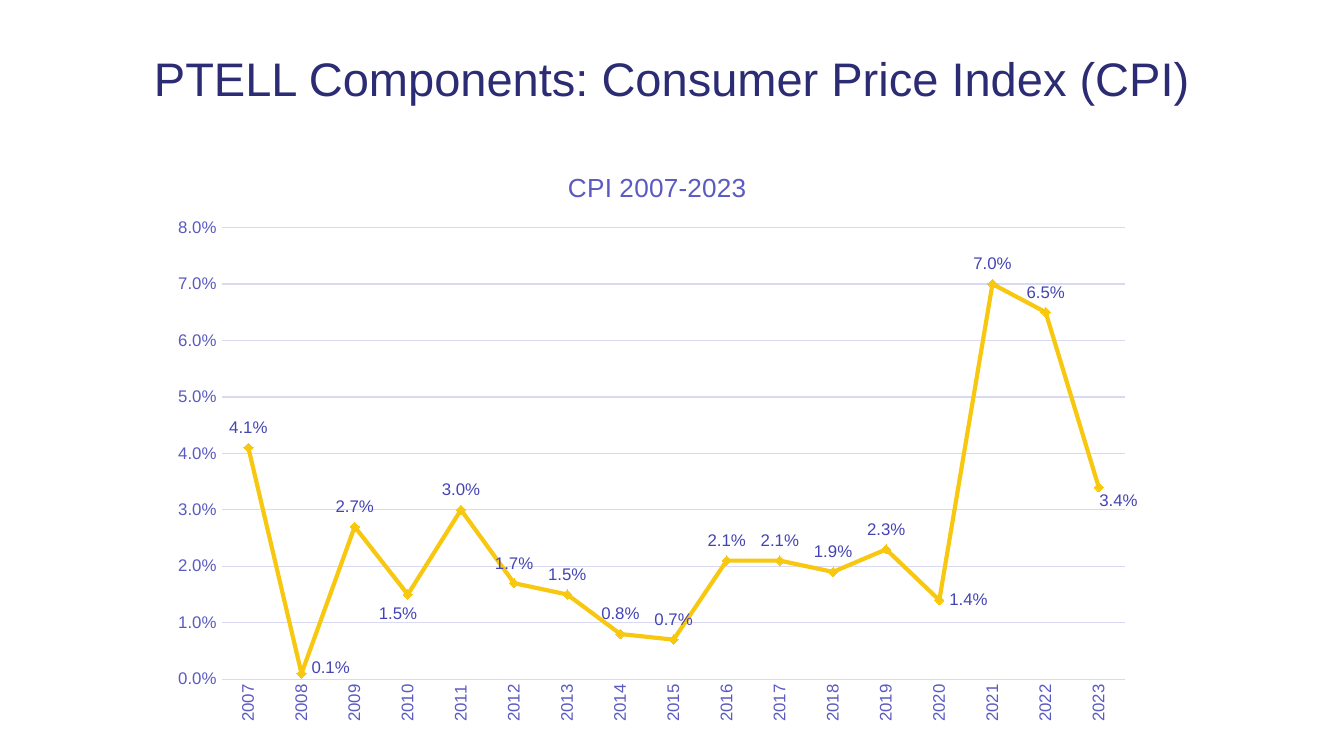
from pptx import Presentation
from pptx.chart.data import CategoryChartData
from pptx.dml.color import RGBColor
from pptx.enum.chart import XL_CHART_TYPE, XL_LABEL_POSITION, XL_MARKER_STYLE, XL_TICK_MARK
from pptx.enum.text import MSO_ANCHOR, PP_ALIGN
from pptx.oxml import parse_xml
from pptx.oxml.ns import nsdecls
from pptx.util import Pt

LINE_MARKERS = XL_CHART_TYPE.LINE_MARKERS
ABOVE, BELOW, RIGHT = XL_LABEL_POSITION.ABOVE, XL_LABEL_POSITION.BELOW, XL_LABEL_POSITION.RIGHT
DIAMOND = XL_MARKER_STYLE.DIAMOND
NO_TICKS = XL_TICK_MARK.NONE
MIDDLE, CENTER = MSO_ANCHOR.MIDDLE, PP_ALIGN.CENTER

FONT = "Arial"
COLORS = {"title": "2C2C75", "axis": "5A5AC1", "label": "4444B4",
          "grid": "D9D9F1", "line": "F8C811"}

TITLE = "PTELL Components: Consumer Price Index (CPI)"
CHART_TITLE = "CPI 2007-2023"
FIRST_YEAR = 2007
RATES = [0.041, 0.001, 0.027, 0.015, 0.030, 0.017, 0.015, 0.008, 0.007,
         0.021, 0.021, 0.019, 0.023, 0.014, 0.070, 0.065, 0.034]
# year: label position, then shift as a share of the chart's width and height
MOVED_LABELS = {
    2008: (RIGHT, 0, -0.01),
    2010: (BELOW, -0.01, 0),
    2020: (RIGHT, 0, 0),
    2023: (BELOW, 0.02, -0.01),
}


def color(name):
    return RGBColor.from_string(COLORS[name])


def style_font(font, size, color_name):
    font.name, font.size, font.bold = FONT, Pt(size), False
    font.color.rgb = color(color_name)


def style_line(line, color_name, width):
    line.color.rgb = color(color_name)
    line.width = Pt(width)


def add_text(slide, text, left, top, width, height, size, color_name):
    box = slide.shapes.add_textbox(Pt(left), Pt(top), Pt(width), Pt(height))
    frame = box.text_frame
    frame.word_wrap = True
    frame.vertical_anchor = MIDDLE
    para = frame.paragraphs[0]
    para.alignment = CENTER
    span = para.add_run()
    span.text = text
    style_font(span.font, size, color_name)


def manual_layout(target="", modes="", **shares):
    """Chart layout element; shares are x, y, w, h of the whole chart."""
    inner = '<c:layoutTarget val="inner"/>' if target else ""
    edges = '<c:xMode val="edge"/><c:yMode val="edge"/>' if modes else ""
    parts = "".join(f'<c:{key} val="{value}"/>' for key, value in shares.items())
    return parse_xml(f'<c:layout {nsdecls("c")}><c:manualLayout>{inner}{edges}{parts}'
                     '</c:manualLayout></c:layout>')


def place_plot_and_title(chart):
    plot_area = chart.element.xpath("//c:plotArea")[0]
    for old in plot_area.xpath("./c:layout"):
        plot_area.remove(old)
    plot_area.insert(0, manual_layout("inner", "edge", x=0.064, y=0.144, w=0.916, h=0.764))
    title = chart.element.xpath("//c:chart/c:title")[0]
    for old in title.xpath("./c:layout"):
        title.remove(old)
    title.xpath("./c:tx")[0].addnext(manual_layout("", "edge", x=0.41, y=0.04))


def style_axes(chart):
    years, rates = chart.category_axis, chart.value_axis
    for axis in (years, rates):
        axis.major_tick_mark = axis.minor_tick_mark = NO_TICKS
        style_font(axis.tick_labels.font, 9, "axis")
    style_line(years.format.line, "grid", 0.75)
    chart.element.xpath("//c:catAx/c:txPr/a:bodyPr")[0].set("rot", "-5400000")
    rates.minimum_scale, rates.maximum_scale, rates.major_unit = 0, 0.08, 0.01
    rates.tick_labels.number_format = "0.0%"
    rates.tick_labels.number_format_is_linked = False
    rates.format.line.fill.background()
    style_line(rates.major_gridlines.format.line, "grid", 0.75)


def style_series(series):
    series.smooth = False
    style_line(series.format.line, "line", 2.25)
    marker = series.marker
    marker.style, marker.size = DIAMOND, 5
    marker.format.fill.solid()
    marker.format.fill.fore_color.rgb = color("line")
    style_line(marker.format.line, "line", 0.75)

    labels = series.data_labels
    labels.show_value = True
    labels.position = ABOVE
    labels.number_format, labels.number_format_is_linked = "0.0%", False
    style_font(labels.font, 9, "label")
    for year, (position, shift_x, shift_y) in MOVED_LABELS.items():
        index = year - FIRST_YEAR
        label = series.points[index].data_label
        style_font(label.font, 9, "label")
        label.position = position
        if shift_x or shift_y:
            mark = labels._element.xpath(f'./c:dLbl/c:idx[@val="{index}"]')[0]
            mark.addnext(manual_layout(x=shift_x, y=shift_y))


def add_rate_chart(slide, left, top, width, height):
    data = CategoryChartData(number_format="0.0%")
    data.categories = [str(FIRST_YEAR + index) for index in range(len(RATES))]
    data.add_series("Series 1", RATES)
    chart = slide.shapes.add_chart(LINE_MARKERS, Pt(left), Pt(top), Pt(width),
                                   Pt(height), data).chart
    style_font(chart.font, 10, "title")
    chart.has_legend = False
    chart.has_title = True
    para = chart.chart_title.text_frame.paragraphs[0]
    span = para.add_run()
    span.text = CHART_TITLE
    style_font(span.font, 14, "axis")
    chart.plots[0].vary_by_categories = False
    style_axes(chart)
    style_series(chart.plots[0].series[0])
    place_plot_and_title(chart)


def main():
    deck = Presentation()
    deck.slide_width, deck.slide_height = Pt(720), Pt(405)
    slide = deck.slides.add_slide(deck.slide_layouts[6])
    add_text(slide, TITLE, 24.5, 19, 671, 45, size=25.2, color_name="title")
    add_rate_chart(slide, 85, 76.3, 528.5, 316.8)
    deck.save("out.pptx")


if __name__ == "__main__":
    main()
